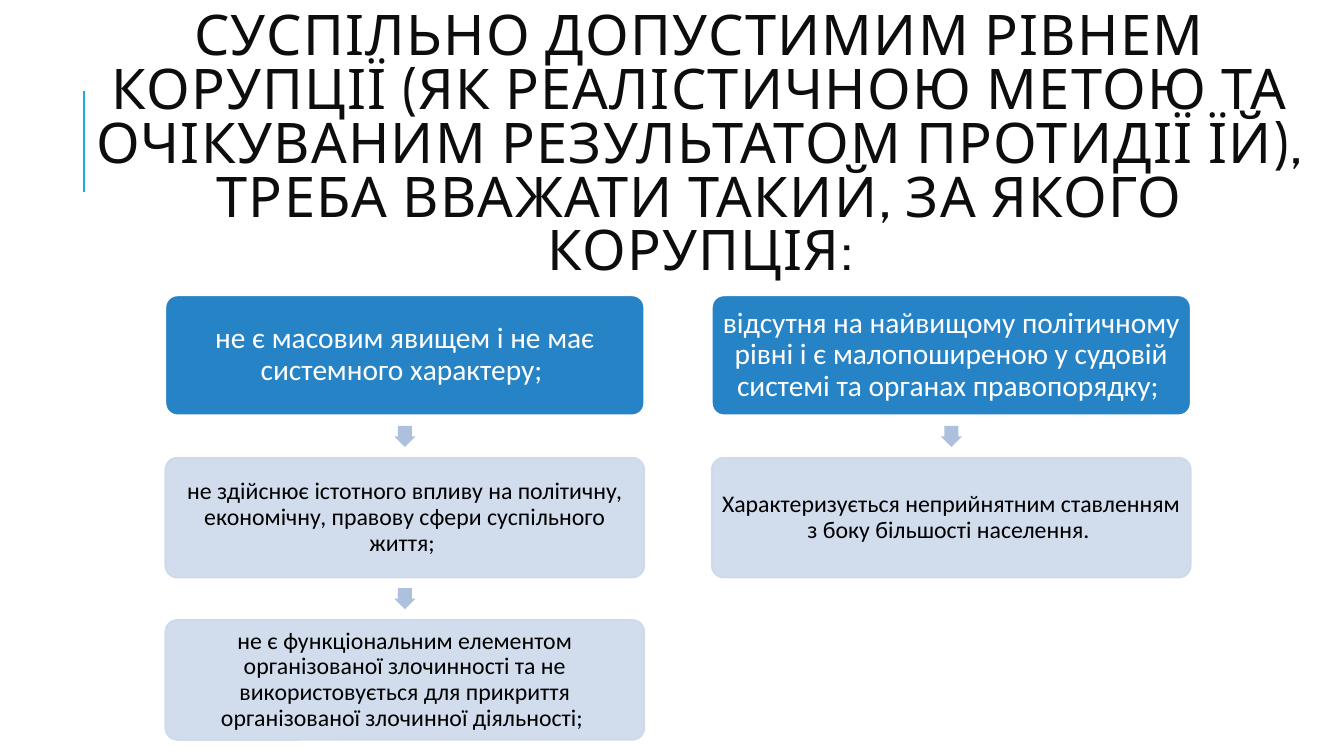
from lxml.etree import SubElement
from pptx import Presentation
from pptx.dml.color import RGBColor
from pptx.enum.shapes import MSO_CONNECTOR, MSO_SHAPE
from pptx.enum.text import MSO_ANCHOR, MSO_AUTO_SIZE, PP_ALIGN
from pptx.oxml.ns import qn
from pptx.util import Pt

PX = 9144  # EMU per px, 100 px to the inch
TOP, STEP, BOX_W, BOX_H = 293, 161, 475, 119
ARROW = 21

TITLE = ("СУСПІЛЬНО ДОПУСТИМИМ РІВНЕМ КОРУПЦІЇ (ЯК РЕАЛІСТИЧНОЮ МЕТОЮ ТА\v"
         "ОЧІКУВАНИМ РЕЗУЛЬТАТОМ ПРОТИДІЇ ЇЙ), ТРЕБА ВВАЖАТИ ТАКИЙ, "
         "ЗА ЯКОГО КОРУПЦІЯ:")
COLUMNS = [
    (164, ["не є масовим явищем і не має системного характеру; ",
           "не здійснює істотного впливу на політичну, економічну, правову "
           "сфери суспільного життя; ",
           "не є функціональним елементом організованої злочинності та не "
           "використовується для прикриття організованої злочинної діяльності; "]),
    (706, ["відсутня на найвищому політичному рівні і є малопоширеною у "
           "судовій системі та органах правопорядку; ",
           "Характеризується неприйнятним ставленням з боку більшості "
           "населення. "]),
]


def px(*sizes):
    return [round(size * PX) for size in sizes]


def color(code):
    return RGBColor.from_string(code)


def write(frame, text, font, size, code, spacing):
    frame.text = text
    frame.word_wrap = True
    frame.auto_size = MSO_AUTO_SIZE.NONE
    frame.vertical_anchor = MSO_ANCHOR.MIDDLE
    para = frame.paragraphs[0]
    para.alignment = PP_ALIGN.CENTER
    para.line_spacing = spacing
    for run in para.runs:
        run.font.name = font
        run.font.size = Pt(size)
        run.font.color.rgb = color(code)


def add_title(slide):
    title = slide.shapes.title
    title.left, title.top, title.width, title.height = px(80, 64, 1229, 164)
    write(title.text_frame, TITLE, "Cabin", 40, "0D0D0D", 0.8)
    for run in title.text_frame.paragraphs[0].runs:
        run.font._element.set("spc", "100")


def add_rule(slide):
    rule = slide.shapes.add_connector(MSO_CONNECTOR.STRAIGHT, *px(83, 190, 83, 90))
    rule.line.color.rgb = color("1CADE4")
    rule.line.width = Pt(1.5)
    SubElement(rule._element.spPr, qn("a:effectLst"))


def add_box(slide, left, top, text, head):
    box = slide.shapes.add_shape(
        MSO_SHAPE.ROUNDED_RECTANGLE, *px(left, top, BOX_W, BOX_H))
    box.adjustments[0] = 0.1
    box.shadow.inherit = False
    box.fill.solid()
    box.fill.fore_color.rgb = color("2683C6" if head else "CDD9EA")
    box.line.color.rgb = color("FFFFFF" if head else "CDD9EA")
    box.line.width = Pt(1.25)
    if not head:
        for tint in box._element.spPr.iter(qn("a:srgbClr")):
            SubElement(tint, qn("a:alpha")).set("val", "90000")
    frame = box.text_frame
    inset, = px(3 if head else 2)
    frame.margin_left = frame.margin_right = inset
    frame.margin_top = frame.margin_bottom = inset
    write(frame, text, "Calibri", 21 if head else 17,
          "FFFFFF" if head else "000000", 0.9)


def add_arrow(slide, left, top):
    arrow = slide.shapes.add_shape(
        MSO_SHAPE.RIGHT_ARROW, *px(left, top, ARROW, ARROW))
    arrow.rotation = 90
    arrow.adjustments[0] = 0.667
    arrow.adjustments[1] = 0.5
    arrow.shadow.inherit = False
    arrow.fill.solid()
    arrow.fill.fore_color.rgb = color("ADC1DF")
    arrow.line.fill.background()


def add_column(slide, left, texts):
    """Stack boxes downwards, with an arrow in each gap."""
    gap = STEP - BOX_H
    for row, text in enumerate(texts):
        top = TOP + row * STEP
        if row:
            add_arrow(slide, left + (BOX_W - ARROW) / 2, top - (gap + ARROW) / 2)
        add_box(slide, left, top, text, row == 0)


def main():
    deck = Presentation()
    deck.slide_width, deck.slide_height = px(1333, 750)
    slide = deck.slides.add_slide(deck.slide_layouts[5])
    add_rule(slide)
    add_title(slide)
    for left, texts in COLUMNS:
        add_column(slide, left, texts)
    deck.save("out.pptx")


if __name__ == "__main__":
    main()
